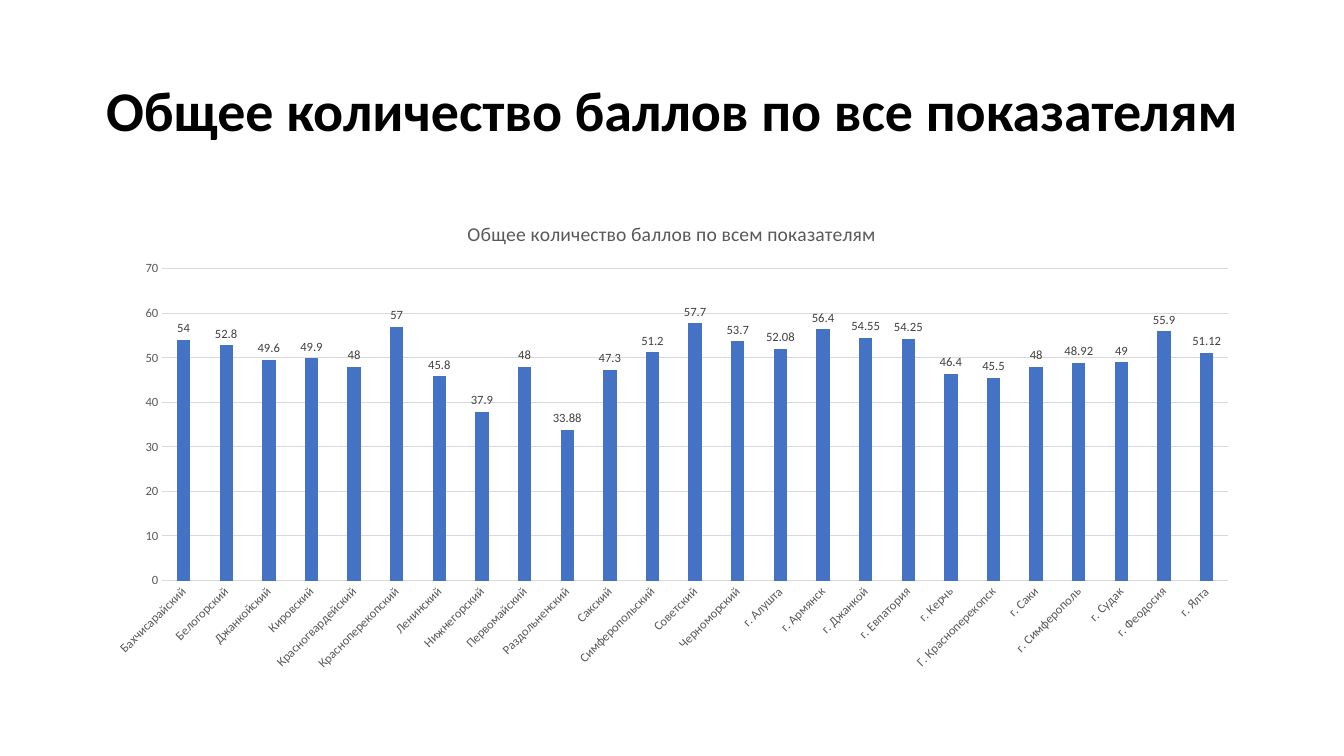
from lxml.etree import SubElement
from pptx import Presentation
from pptx.chart.data import CategoryChartData
from pptx.dml.color import RGBColor
from pptx.enum.chart import XL_CHART_TYPE, XL_LABEL_POSITION, XL_TICK_MARK
from pptx.enum.text import MSO_ANCHOR, PP_ALIGN
from pptx.oxml.ns import qn
from pptx.util import Inches, Pt

HEADING = "Общее количество баллов по все показателям"
CHART_TITLE = "Общее количество баллов по всем показателям"
SCORES = {
    "Бахчисарайский": 54,
    "Белогорский": 52.8,
    "Джанкойский": 49.6,
    "Кировский": 49.9,
    "Красногвардейский": 48,
    "Красноперекопский": 57,
    "Ленинский": 45.8,
    "Нижнегорский": 37.9,
    "Первомайский": 48,
    "Раздольненский": 33.88,
    "Сакский": 47.3,
    "Симферопольский": 51.2,
    "Советский": 57.7,
    "Черноморский": 53.7,
    "г. Алушта": 52.08,
    "г. Армянск": 56.4,
    "г. Джанкой": 54.55,
    "г. Евпатория": 54.25,
    "г. Керчь": 46.4,
    "Г. Красноперекопск": 45.5,
    "г. Саки": 48,
    "г. Симферополь": 48.92,
    "г. Судак": 49,
    "г. Феодосия": 55.9,
    "г. Ялта": 51.12,
}

THEME = {
    "font": "Calibri",
    "bar": "4472C4",
    "grid": "D9D9D9",
    "heading": {"size": 40, "color": "000000", "bold": True},
    "chart": {"size": 10, "color": "000000"},
    "title": {"size": 14, "color": "595959", "bold": False},
    "axis": {"size": 9, "color": "595959"},
    "label": {"size": 9, "color": "404040"},
}
WIDTH, HEIGHT = 13.33, 7.5
MARGIN = 0.92
CONTENT_WIDTH = WIDTH - 2 * MARGIN
HEADING_BOX = (MARGIN, 0.4, CONTENT_WIDTH, 1.45)
CHART_BOX = (MARGIN, 2, CONTENT_WIDTH, 4.76)
PLOT_SHARES = {"x": 0.06, "y": 0.14, "w": 0.92, "h": 0.65}
LABEL_ANGLE = -45


def set_all(target, values):
    for name, value in values.items():
        setattr(target, name, value)


def style_font(font, role):
    style = dict(THEME[role])
    font.color.rgb = RGBColor.from_string(style.pop("color"))
    set_all(font, {**style, "size": Pt(style["size"]), "name": THEME["font"]})


def style_line(line):
    line.color.rgb = RGBColor.from_string(THEME["grid"])
    line.width = Pt(0.75)


def add_heading(slide):
    frame = slide.shapes.add_textbox(*map(Inches, HEADING_BOX)).text_frame
    set_all(frame, {"word_wrap": True, "vertical_anchor": MSO_ANCHOR.MIDDLE})
    paragraph = frame.paragraphs[0]
    set_all(paragraph, {"text": HEADING, "alignment": PP_ALIGN.CENTER, "line_spacing": 0.9})
    style_font(paragraph.runs[0].font, "heading")


def place_plot(chart):
    plot_area = chart._chartSpace.chart.plotArea
    for layout in plot_area.findall(qn("c:layout")):
        plot_area.remove(layout)
    layout = SubElement(plot_area, qn("c:layout"))
    plot_area.insert(0, layout)
    manual = SubElement(layout, qn("c:manualLayout"))
    settings = {"layoutTarget": "inner", "xMode": "edge", "yMode": "edge", **PLOT_SHARES}
    for name, value in settings.items():
        SubElement(manual, qn(f"c:{name}")).set("val", str(value))


def add_score_chart(slide):
    data = CategoryChartData()
    data.categories = list(SCORES)
    data.add_series("Series 1", list(SCORES.values()))
    chart = slide.shapes.add_chart(
        XL_CHART_TYPE.COLUMN_CLUSTERED, *map(Inches, CHART_BOX), data
    ).chart
    style_font(chart.font, "chart")
    set_all(chart, {"has_legend": False, "has_title": True})
    title = chart.chart_title
    title.include_in_layout = False
    title.text_frame.text = CHART_TITLE
    style_font(title.text_frame.paragraphs[0].runs[0].font, "title")

    for axis in (chart.category_axis, chart.value_axis):
        set_all(axis, {"major_tick_mark": XL_TICK_MARK.NONE, "minor_tick_mark": XL_TICK_MARK.NONE})
        style_font(axis.tick_labels.font, "axis")
    style_line(chart.category_axis.format.line)
    body = chart.category_axis._element.find(qn("c:txPr")).find(qn("a:bodyPr"))
    body.set("rot", str(LABEL_ANGLE * 60000))
    value_axis = chart.value_axis
    set_all(value_axis, {"minimum_scale": 0, "maximum_scale": 70, "major_unit": 10})
    value_axis.format.line.fill.background()
    style_line(value_axis.major_gridlines.format.line)

    plot = chart.plots[0]
    set_all(plot, {"gap_width": 219, "overlap": -27, "vary_by_categories": False})
    series = plot.series[0]
    series.format.fill.solid()
    series.format.fill.fore_color.rgb = RGBColor.from_string(THEME["bar"])
    labels = series.data_labels
    set_all(labels, {"show_value": True, "position": XL_LABEL_POSITION.OUTSIDE_END})
    style_font(labels.font, "label")
    place_plot(chart)


def main():
    presentation = Presentation()
    set_all(presentation, {"slide_width": Inches(WIDTH), "slide_height": Inches(HEIGHT)})
    slide = presentation.slides.add_slide(presentation.slide_layouts[6])
    add_heading(slide)
    add_score_chart(slide)
    presentation.save("out.pptx")


if __name__ == "__main__":
    main()
